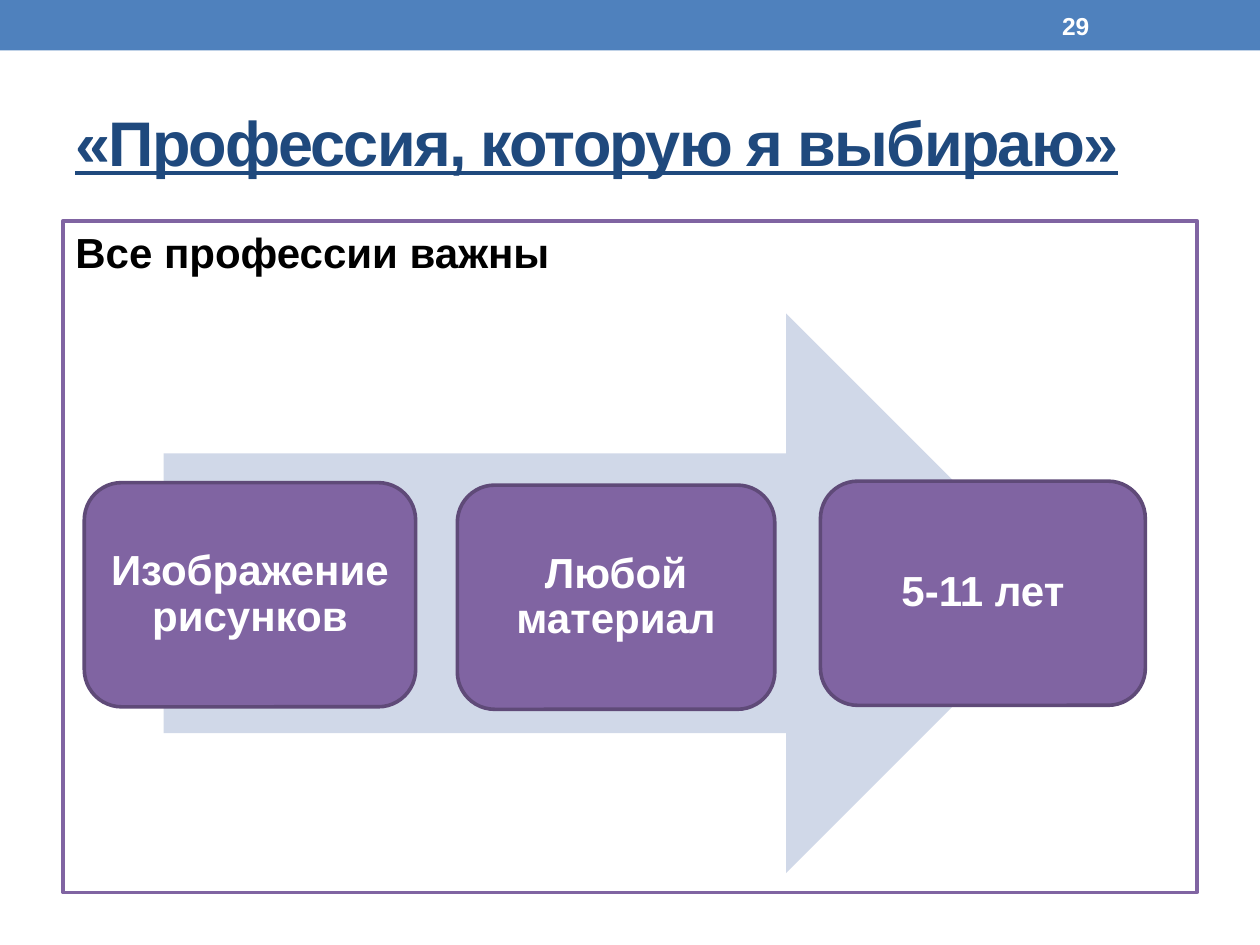
from pptx import Presentation
from pptx import util as u
from pptx.dml import color
from pptx.enum import shapes, text

COLORS = {
    "bar": "4F81BD",
    "title": "1F497D",
    "white": "FFFFFF",
    "black": "000000",
    "purple": "8064A2",
    "card_line": "5F4A78",
    "arrow": "D0D8E8",
}
SHAPE = shapes.MSO_SHAPE
ANCHOR = text.MSO_ANCHOR
ALIGN = text.PP_ALIGN


def rgb(name):
    return color.RGBColor.from_string(COLORS[name])


def add_box(s, kind, box, fill, line=None):
    sp = s.shapes.add_shape(kind, *map(u.Cm, box))
    sp.shadow.inherit = False
    sp.fill.solid()
    sp.fill.fore_color.rgb = rgb(fill)
    if line:
        sp.line.color.rgb = rgb(line)
        sp.line.width = u.Pt(2.08)
    else:
        sp.line.fill.background()
    return sp


def write(sp, words, size, tint, anchor=ANCHOR.MIDDLE, align=ALIGN.LEFT):
    tf = sp.text_frame
    tf.word_wrap = True
    tf.vertical_anchor = anchor
    p = tf.paragraphs[0]
    p.text = words
    p.alignment = align
    p.font.name = "Arial"
    p.font.size = u.Pt(size)
    p.font.bold = True
    p.font.color.rgb = rgb(tint)
    return p


def add_header(s, box, number):
    x, y, w, h = box
    add_box(s, SHAPE.RECTANGLE, box, "bar")
    sp = s.shapes.add_textbox(u.Cm(x + 21.16), u.Cm(y + 0.05), u.Cm(2.97), u.Cm(h - 0.1))
    write(sp, number, 14, "white")


def add_title(s, box, words):
    sp = s.shapes.add_textbox(*map(u.Cm, box))
    p = write(sp, words, 36, "title")
    r = p.runs[0]
    r.font.underline = True
    r.font._element.set("spc", "-100")


def add_card(s, box, words, inset):
    sp = add_box(s, SHAPE.ROUNDED_RECTANGLE, box, "purple", "card_line")
    tf = sp.text_frame
    tf.margin_left = tf.margin_right = u.Cm(inset)
    tf.margin_top = tf.margin_bottom = u.Cm(inset)
    p = write(sp, words, 24, "white", align=ALIGN.CENTER)
    p.line_spacing = 0.9


def add_process(s, box, heading, cards):
    x, y, w, h = box
    panel = add_box(s, SHAPE.RECTANGLE, box, "white", "purple")
    write(panel, heading, 24, "black", anchor=ANCHOR.TOP)
    add_box(s, SHAPE.RIGHT_ARROW, (x + 2.03, y + 1.87, 18.19, 11.28), "arrow")
    for dx, dy, width, inset, words in cards:
        add_card(s, (x + dx, y + dy, width, 4.52), words, inset)


def main():
    prs = Presentation()
    prs.slide_width, prs.slide_height = u.Cm(25.4), u.Cm(19.05)
    s = prs.slides.add_slide(prs.slide_layouts[6])
    add_header(s, (0, 0, 25.4, 1.02), "29")
    add_title(s, (1.27, 1.47, 22.86, 2.74), "«Профессия, которую я выбираю»")
    cards = [
        (0.43, 5.28, 6.68, 0.2, "Изображение рисунков"),
        (7.95, 5.33, 6.4, 0.25, "Любой материал"),
        (15.27, 5.25, 6.55, 0.25, "5-11 лет"),
    ]
    add_process(s, (1.27, 4.45, 22.86, 13.54), "Все профессии важны", cards)
    prs.save("out.pptx")


if __name__ == "__main__":
    main()
